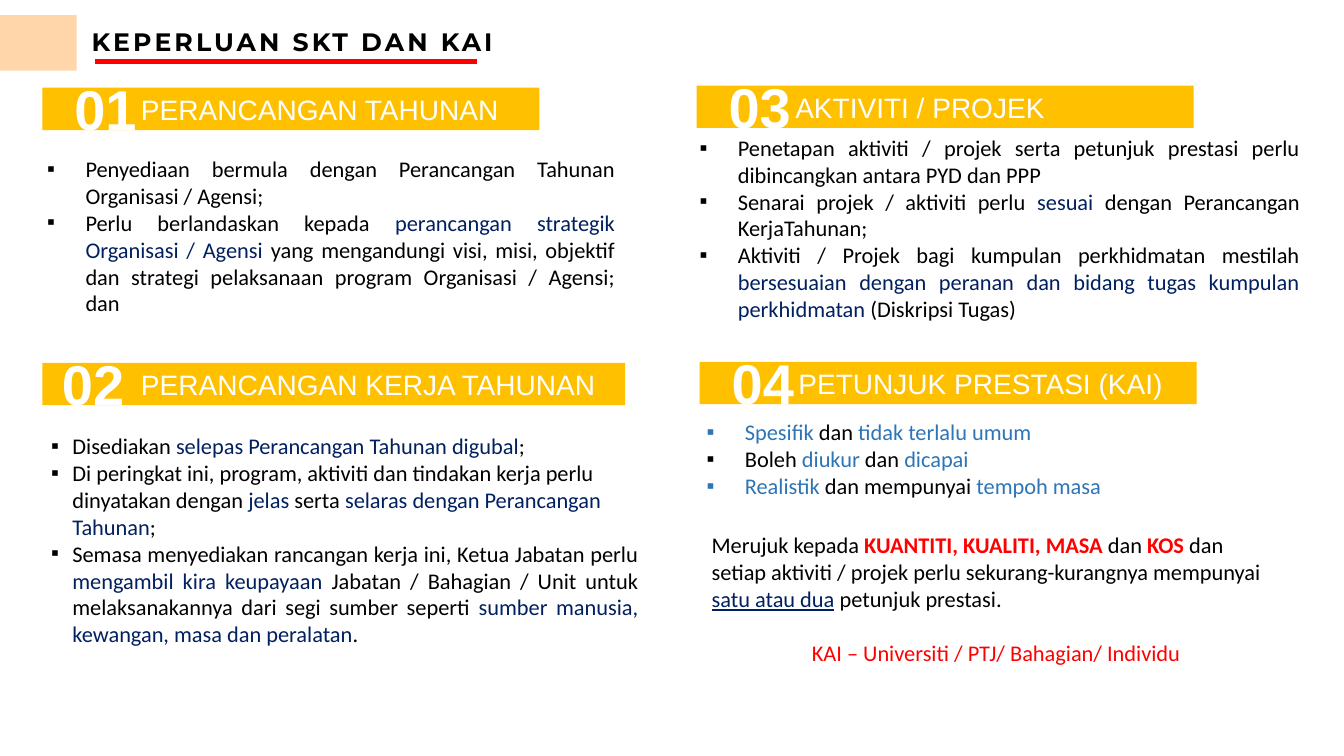
from dataclasses import dataclass

import pptx
import pptx.dml.color
import pptx.enum.shapes
import pptx.enum.text
import pptx.oxml.ns
import pptx.util
from lxml import etree

Inches = pptx.util.Inches
Pt = pptx.util.Pt
RGBColor = pptx.dml.color.RGBColor
Align = pptx.enum.text.PP_ALIGN
Anchor = pptx.enum.text.MSO_ANCHOR
Shape = pptx.enum.shapes.MSO_SHAPE
qn = pptx.oxml.ns.qn

BLACK = RGBColor(0x00, 0x00, 0x00)
WHITE = RGBColor(0xFF, 0xFF, 0xFF)
NAVY = RGBColor(0x00, 0x20, 0x60)
BLUE = RGBColor(0x2E, 0x75, 0xB6)
RED = RGBColor(0xFF, 0x00, 0x00)
GOLD = RGBColor(0xFF, 0xC0, 0x00)
PEACH = RGBColor(0xFF, 0xD6, 0xA9)


@dataclass
class Run:
    text: str
    color: RGBColor = BLACK
    bold: bool = False
    under: bool = False


@dataclass
class Para:
    runs: list[Run]
    align: Align = Align.JUSTIFY
    before: float = 0


@dataclass
class Box:
    left: float
    top: float
    width: float
    height: float
    paras: list[Para]
    indent: float = 0


@dataclass
class Banner:
    number: str
    title: str
    left: float
    top: float
    width: float = 4.93
    badge: float = 1.25


BANNERS = [
    Banner("01", "PERANCANGAN TAHUNAN", 0.42, 0.87),
    Banner("02 ", "PERANCANGAN KERJA TAHUNAN", 0.42, 3.6, 5.78, 1.16),
    Banner("03", "AKTIVITI / PROJEK", 6.91, 0.85),
    Banner("04", "PETUNJUK PRESTASI (KAI)", 6.94, 3.59),
]

BOXES = [
    Box(0.37, 1.49, 5.83, 1.78, [
        Para([Run("Penyediaan bermula dengan Perancangan Tahunan Organisasi / Agensi;")]),
        Para([Run("Perlu berlandaskan kepada "),
              Run("perancangan strategik Organisasi / Agensi ", NAVY),
              Run("yang mengandungi visi, misi, objektif dan strategi pelaksanaan "
                  "program Organisasi / Agensi; dan")]),
    ], 0.38),
    Box(0.41, 4.24, 6.02, 3.16, [
        Para([Run("Disediakan "), Run("selepas Perancangan Tahunan digubal", NAVY), Run(";")]),
        Para([Run("Di peringkat ini, program, aktiviti dan tindakan kerja perlu "
                  "dinyatakan dengan "),
              Run("jelas", NAVY), Run(" serta "),
              Run("selaras dengan Perancangan Tahunan", NAVY), Run(";")], Align.LEFT),
        Para([Run("Semasa menyediakan rancangan kerja ini, Ketua Jabatan perlu "),
              Run("mengambil kira keupayaan ", NAVY),
              Run("Jabatan / Bahagian / Unit untuk melaksanakannya dari segi sumber seperti "),
              Run("sumber manusia, kewangan, masa dan peralatan", NAVY), Run(".")]),
    ], 0.21),
    Box(6.84, 1.28, 6.15, 2.57, [
        Para([Run("Penetapan aktiviti / projek serta petunjuk prestasi perlu "
                  "dibincangkan antara PYD dan PPP")]),
        Para([Run("Senarai projek / aktiviti perlu "), Run("sesuai ", NAVY),
              Run("dengan Perancangan KerjaTahunan;")]),
        Para([Run("Aktiviti / Projek bagi kumpulan perkhidmatan mestilah "),
              Run("bersesuaian dengan peranan dan bidang tugas kumpulan perkhidmatan", NAVY),
              Run(" (Diskripsi Tugas)")]),
    ], 0.38),
    Box(6.91, 4.1, 6.15, 1.21, [
        Para([Run("Spesifik ", BLUE), Run("dan "), Run("tidak terlalu umum", BLUE)]),
        Para([Run("Boleh "), Run("diukur ", BLUE), Run("dan "), Run("dicapai", BLUE)]),
        Para([Run("Realistik ", BLUE), Run("dan mempunyai "), Run("tempoh masa", BLUE)]),
    ], 0.38),
    Box(6.96, 5.22, 5.84, 1.45, [
        Para([Run("Merujuk kepada "), Run("KUANTITI, KUALITI, MASA ", RED, True),
              Run("dan "), Run("KOS ", RED, True),
              Run("dan setiap aktiviti / projek perlu sekurang-kurangnya mempunyai "),
              Run("satu atau dua", NAVY, under=True), Run(" petunjuk prestasi.")], Align.LEFT),
        Para([Run("KAI – Universiti / PTJ/ Bahagian/ Individu", RED)], Align.CENTER, 19.5),
    ]),
]


def style(run, face: str, size: float, color: RGBColor, bold: bool = False) -> None:
    run.font.name = face
    run.font.size = Pt(size)
    run.font.color.rgb = color
    run.font.bold = bold


def indent(para, left: float, first: float = 0) -> None:
    props = para._p.get_or_add_pPr()
    props.set("marL", str(Inches(left)))
    props.set("indent", str(Inches(first)))


def bullet(para, left: float) -> None:
    indent(para, left, -left)
    props = para._p.get_or_add_pPr()
    etree.SubElement(props, qn("a:buFont")).set("typeface", "Arial")
    etree.SubElement(props, qn("a:buChar")).set("char", "▪")


def add_text(shapes, left: float, top: float, width: float, height: float):
    box = shapes.add_textbox(Inches(left), Inches(top), Inches(width), Inches(height))
    box.text_frame.word_wrap = True
    return box.text_frame


def add_rect(shapes, left: float, top: float, width: float, height: float, fill: RGBColor):
    rect = shapes.add_shape(Shape.RECTANGLE, Inches(left), Inches(top),
                            Inches(width), Inches(height))
    rect.shadow.inherit = False
    rect.fill.solid()
    rect.fill.fore_color.rgb = fill
    rect.line.fill.background()
    return rect


def draw_box(shapes, box: Box) -> None:
    frame = add_text(shapes, box.left, box.top, box.width, box.height)
    for place, item in enumerate(box.paras):
        para = frame.add_paragraph() if place else frame.paragraphs[0]
        para.alignment = item.align
        para.space_before = Pt(item.before)
        if box.indent:
            bullet(para, box.indent)
        for part in item.runs:
            run = para.add_run()
            run.text = part.text
            style(run, "Calibri", 16, part.color, part.bold)
            run.font.underline = part.under


def draw_banner(shapes, banner: Banner) -> None:
    group = shapes.add_group_shape().shapes
    bar = add_rect(group, banner.left, banner.top, banner.width, 0.42, GOLD)
    bar.text_frame.text = banner.title
    bar.text_frame.word_wrap = True
    bar.text_frame.vertical_anchor = Anchor.MIDDLE
    para = bar.text_frame.paragraphs[0]
    para.alignment = Align.LEFT
    indent(para, 0.88)
    style(para.runs[0], "Arial", 20, WHITE)

    frame = add_text(group, banner.left, banner.top - 0.18, banner.badge, 0.77)
    frame.text = banner.number
    frame.paragraphs[0].alignment = Align.CENTER
    style(frame.paragraphs[0].runs[0], "Arial", 40, WHITE, True)


def draw_title(shapes) -> None:
    frame = add_text(shapes, 0.81, 0.21, 6.5, 0.4)
    frame.text = "KEPERLUAN SKT DAN KAI"
    run = frame.paragraphs[0].runs[0]
    style(run, "Montserrat", 18, BLACK, True)
    run._r.get_or_add_rPr().set("spc", "220")
    rule = shapes.add_connector(pptx.enum.shapes.MSO_CONNECTOR.STRAIGHT,
                                Inches(0.94), Inches(0.61), Inches(4.73), Inches(0.61))
    rule.line.color.rgb = RED
    rule.line.width = Pt(3)
    etree.SubElement(rule._element.spPr, qn("a:effectLst"))
    add_rect(shapes, 0, 0.15, 0.76, 0.55, PEACH)


def main() -> None:
    deck = pptx.Presentation()
    deck.slide_width = Inches(13.33)
    deck.slide_height = Inches(7.5)
    shapes = deck.slides.add_slide(deck.slide_layouts[6]).shapes
    for box in BOXES:
        draw_box(shapes, box)
    for banner in BANNERS:
        draw_banner(shapes, banner)
    draw_title(shapes)
    deck.save("out.pptx")


if __name__ == "__main__":
    main()
